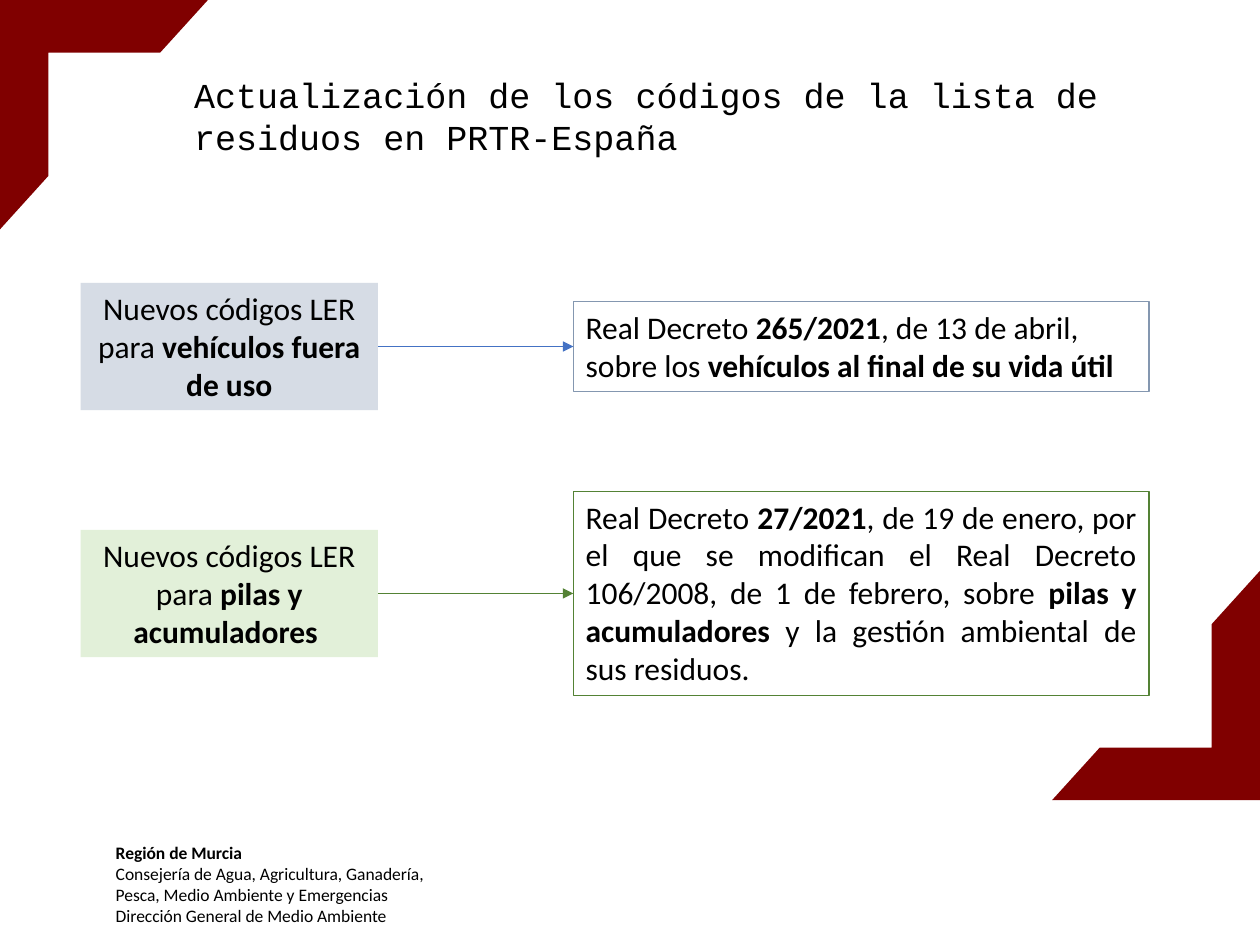
from dataclasses import dataclass

from lxml import etree
from pptx import Presentation
from pptx.dml.color import RGBColor
from pptx.enum.shapes import MSO_CONNECTOR as Connector, MSO_SHAPE as Shape
from pptx.enum.text import MSO_ANCHOR as Anchor, MSO_AUTO_SIZE as AutoSize, PP_ALIGN as Align
from pptx.oxml.ns import qn
from pptx.util import Inches, Pt


@dataclass(frozen=True)
class Theme:
    title_font: str = "Courier New"
    body_font: str = "Calibri"
    title_size: int = 20
    body_size: int = 18
    footer_size: int = 10
    text: str = "000000"
    background: str = "FFFFFF"
    frame: str = "800000"
    vehicle_fill: str = "D6DCE5"
    vehicle_border: str = "8497B0"
    vehicle_arrow: str = "4472C4"
    battery_fill: str = "E2F0D9"
    battery_line: str = "548235"


THEME = Theme()


def write_text(text_frame, paragraphs, *, size, font=THEME.body_font,
               align=Align.LEFT, anchor=Anchor.TOP, wrap=True):
    """Write paragraphs given as lists of runs; '*' at the start marks bold."""
    text_frame.word_wrap = wrap
    text_frame.auto_size = AutoSize.NONE
    text_frame.vertical_anchor = anchor
    for index, runs in enumerate(paragraphs):
        paragraph = text_frame.add_paragraph() if index else text_frame.paragraphs[0]
        paragraph.alignment = align
        for text in runs:
            run = paragraph.add_run()
            run.text = text.removeprefix("*")
            run.font.name = font
            run.font.size = Pt(size)
            run.font.bold = text.startswith("*")
            run.font.color.rgb = RGBColor.from_string(THEME.text)


class SlideBuilder:
    def __init__(self, slide, theme):
        self.slide = slide
        self.theme = theme

    def title(self, text, left, top, width, height):
        title = self.slide.shapes.title
        title.left, title.top = Inches(left), Inches(top)
        title.width, title.height = Inches(width), Inches(height)
        write_text(title.text_frame, [[text]], size=self.theme.title_size,
                   font=self.theme.title_font)

    def box(self, left, top, width, height, *, kind=Shape.RECTANGLE, fill=None, border=None):
        shape = self.slide.shapes.add_shape(
            kind, Inches(left), Inches(top), Inches(width), Inches(height))
        shape.shadow.inherit = False
        if fill:
            shape.fill.solid()
            shape.fill.fore_color.rgb = RGBColor.from_string(fill)
        else:
            shape.fill.background()
        if border:
            shape.line.color.rgb = RGBColor.from_string(border)
            shape.line.width = Pt(0.75)
        else:
            shape.line.fill.background()
        return shape

    def corner(self, left, top, rotation=0):
        shape = self.box(left, top, 1.65, 1.82, kind=Shape.HALF_FRAME, fill=self.theme.frame)
        shape.adjustments[0] = 0.253
        shape.adjustments[1] = 0.233
        shape.rotation = rotation

    def arrow(self, start, end, middle, color):
        arrow = self.slide.shapes.add_connector(
            Connector.STRAIGHT, Inches(start), Inches(middle), Inches(end), Inches(middle))
        arrow.line.color.rgb = RGBColor.from_string(color)
        arrow.line.width = Pt(0.5)
        etree.SubElement(arrow.line._get_or_add_ln(), qn("a:tailEnd"), type="triangle")
        etree.SubElement(arrow._element.spPr, qn("a:effectLst"))

    def topic_row(self, middle, topic, decree, *, decree_height, fill, border, arrow,
                  align=Align.LEFT):
        """Place a topic, an arrow and its decree on one centre line."""
        topic_left, topic_width, topic_height = 0.64, 2.36, 1.01
        decree_left, decree_width = 4.55, 4.57
        size = self.theme.body_size
        topic_box = self.box(topic_left, middle - topic_height / 2,
                             topic_width, topic_height, fill=fill)
        write_text(topic_box.text_frame, [topic], size=size, align=Align.CENTER)
        decree_box = self.box(decree_left, middle - decree_height / 2,
                              decree_width, decree_height, border=border)
        write_text(decree_box.text_frame, [decree], size=size, align=align)
        self.arrow(topic_left + topic_width, decree_left, middle, arrow)

    def footer(self, lines):
        box = self.box(0.82, 6.63, 2.68, 0.77, fill=self.theme.background)
        write_text(box.text_frame, [[line] for line in lines],
                   size=self.theme.footer_size, wrap=False)


def main():
    presentation = Presentation()
    presentation.slide_width, presentation.slide_height = Inches(10), Inches(7.5)
    slide = presentation.slides.add_slide(presentation.slide_layouts[5])
    builder = SlideBuilder(slide, THEME)

    # Footer and corner frames
    builder.footer([
        "*Región de Murcia",
        "Consejería de Agua, Agricultura, Ganadería,",
        "Pesca, Medio Ambiente y Emergencias",
        "Dirección General de Medio Ambiente",
    ])
    builder.corner(0, 0)
    builder.corner(8.35, 4.53, rotation=180)

    # Title
    builder.title("Actualización de los códigos de la lista de residuos en PRTR-España",
                  1.44, 0.53, 8.56, 0.77)

    # Topics and their decrees
    builder.topic_row(
        2.75,
        ["Nuevos códigos LER para ", "*vehículos fuera de uso"],
        ["Real Decreto ", "*265/2021", ", de 13 de abril, sobre los ",
         "*vehículos al final de su vida útil"],
        decree_height=0.71, fill=THEME.vehicle_fill,
        border=THEME.vehicle_border, arrow=THEME.vehicle_arrow)
    builder.topic_row(
        4.71,
        ["Nuevos códigos LER para ", "*pilas y acumuladores "],
        ["Real Decreto ", "*27/2021",
         ", de 19 de enero, por el que se modifican el Real Decreto 106/2008, "
         "de 1 de febrero, sobre ",
         "*pilas y acumuladores", " y la gestión ambiental de sus residuos."],
        decree_height=1.62, fill=THEME.battery_fill,
        border=THEME.battery_line, arrow=THEME.battery_line, align=Align.JUSTIFY)

    presentation.save("out.pptx")


if __name__ == "__main__":
    main()
